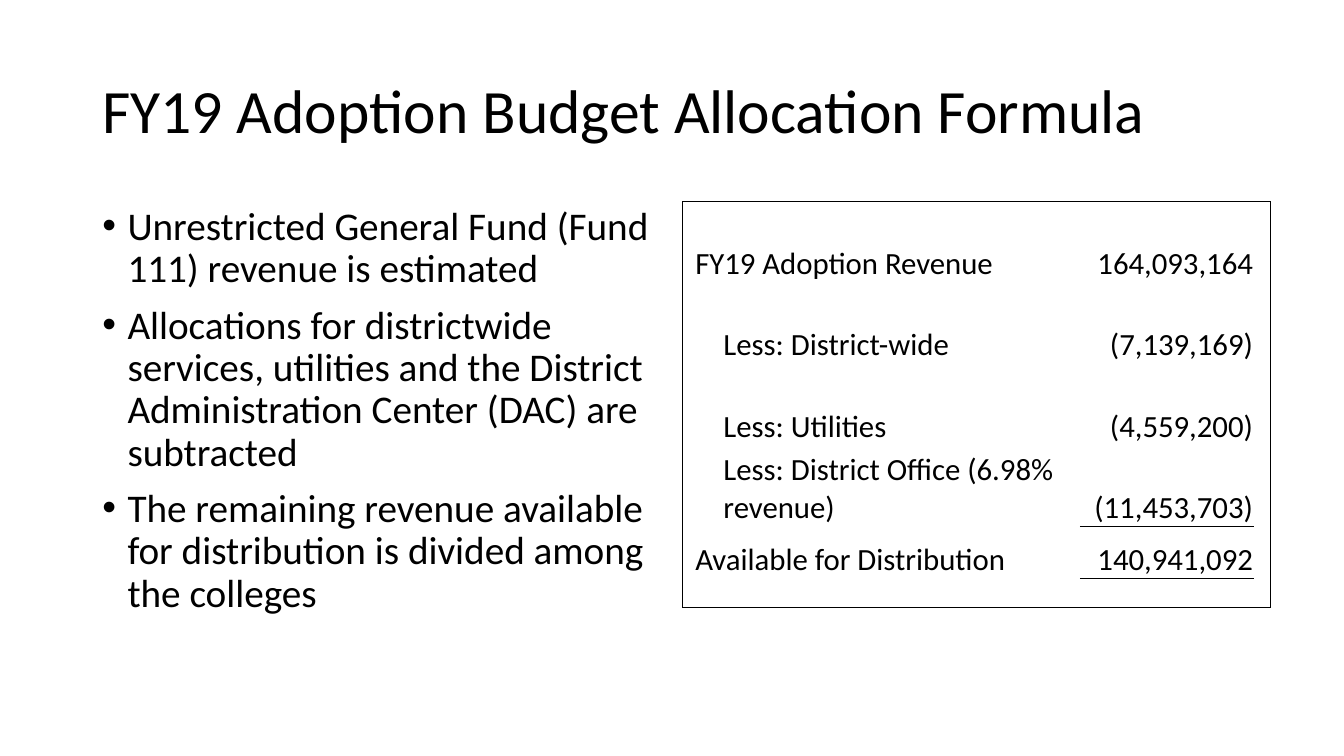
from lxml import etree
from pptx import Presentation
from pptx.dml.color import RGBColor
from pptx.enum.text import MSO_ANCHOR, PP_ALIGN
from pptx.oxml import parse_xml
from pptx.oxml.ns import nsdecls, qn
from pptx.util import Inches, Pt

MIDDLE, BOTTOM = MSO_ANCHOR.MIDDLE, MSO_ANCHOR.BOTTOM
LEFT, RIGHT = PP_ALIGN.LEFT, PP_ALIGN.RIGHT

THEME = {
    "font": "Calibri",
    "ink": "000000",
    "title": Pt(44),
    "body": Pt(28),
    "table": Pt(22),
    "rule": Pt(0.5),
}
PLAIN_TABLE = "{2D5ABB26-0587-4C30-8999-92F81FD0307C}"

deck = Presentation()
deck.slide_width, deck.slide_height = Inches(13.33), Inches(7.5)
page = deck.slides.add_slide(deck.slide_layouts[6])
column, row = deck.slide_width / 160, deck.slide_height / 150


def place(left, top, width, height):
    return int(left * column), int(top * row), int(width * column), int(height * row)


def add_span(para, text, size):
    span = para.add_run()
    span.text = text
    span.font.name = THEME["font"]
    span.font.size = THEME[size]
    span.font.color.rgb = RGBColor.from_string(THEME["ink"])


title_box = page.shapes.add_textbox(*place(11, 8, 138, 29))
title_box.text_frame.word_wrap = True
title_box.text_frame.vertical_anchor = MIDDLE
title = title_box.text_frame.paragraphs[0]
title.line_spacing = 0.9
add_span(title, "FY19 Adoption Budget Allocation Formula", "title")

points = [
    "Unrestricted General Fund (Fund 111) revenue is estimated",
    "Allocations for districtwide services, utilities and the District "
    "Administration Center (DAC) are subtracted",
    "The remaining revenue available for distribution is divided among the colleges",
]
points_box = page.shapes.add_textbox(*place(11, 40, 68, 95))
points_box.text_frame.word_wrap = True
for index, point in enumerate(points):
    frame = points_box.text_frame
    para = frame.add_paragraph() if index else frame.paragraphs[0]
    para.line_spacing = 0.9
    para.space_before = Pt(10)
    settings = para._p.get_or_add_pPr()
    settings.set("marL", str(Inches(0.25)))
    settings.set("indent", str(-Inches(0.25)))
    etree.SubElement(settings, qn("a:buFont")).set("typeface", "Arial")
    etree.SubElement(settings, qn("a:buChar")).set("char", "•")
    add_span(para, point, "body")

lines = [
    ("FY19 Adoption Revenue", "164,093,164", 1),
    ("Less: District-wide", "(7,139,169)", 2),
    ("Less: Utilities", "(4,559,200)", 2),
    ("Less: District Office (6.98% revenue)", "(11,453,703)", 2),
    ("Available for Distribution", "140,941,092", 1),
]
width_shares = [2, 4.8, 60.8, 29.6, 2.8]
height_shares = [7.2, 12.8, 20, 20, 20, 12.8, 7.2]
last_row, last_column = len(height_shares) - 1, len(width_shares) - 1
amount_column, ruled_rows = 3, (4, 5)

left, top, width, height = place(81.25, 40, 70, 80.6)
table_frame = page.shapes.add_table(
    len(height_shares), len(width_shares), left, top, width, height
)
table = table_frame.table
table.first_row = table.horz_banding = False
table._tbl.tblPr.find(qn("a:tableStyleId")).text = PLAIN_TABLE
for index, share in enumerate(width_shares):
    table.columns[index].width = int(width * share / 100)
for index, share in enumerate(height_shares):
    table.rows[index].height = int(height * share / 100)

for r in range(last_row + 1):
    for c in range(last_column + 1):
        cell = table.cell(r, c)
        cell.margin_left = cell.margin_right = cell.margin_top = Inches(0.01)
        cell.margin_bottom = 0
        cell.vertical_anchor = BOTTOM
        edges = {
            "L": c == 0,
            "R": c == last_column,
            "T": r == 0 or (c == amount_column and r - 1 in ruled_rows),
            "B": r == last_row or (c == amount_column and r in ruled_rows),
        }
        for side, drawn in edges.items():
            if drawn:
                cell._tc.get_or_add_tcPr().append(parse_xml(
                    f'<a:ln{side} {nsdecls("a")} w="{THEME["rule"]}"><a:solidFill>'
                    f'<a:srgbClr val="{THEME["ink"]}"/></a:solidFill></a:ln{side}>'
                ))
        cell.fill.background()
        blank_end = etree.SubElement(cell.text_frame.paragraphs[0]._p, qn("a:endParaRPr"))
        blank_end.set("sz", "1000")

for r, (label, amount, label_column) in enumerate(lines, start=1):
    if label_column == 1:
        table.cell(r, 1).merge(table.cell(r, 2))
    for c, text, align in ((label_column, label, LEFT), (amount_column, amount, RIGHT)):
        para = table.cell(r, c).text_frame.paragraphs[0]
        para.alignment = align
        add_span(para, text, "table")

deck.save("out.pptx")
